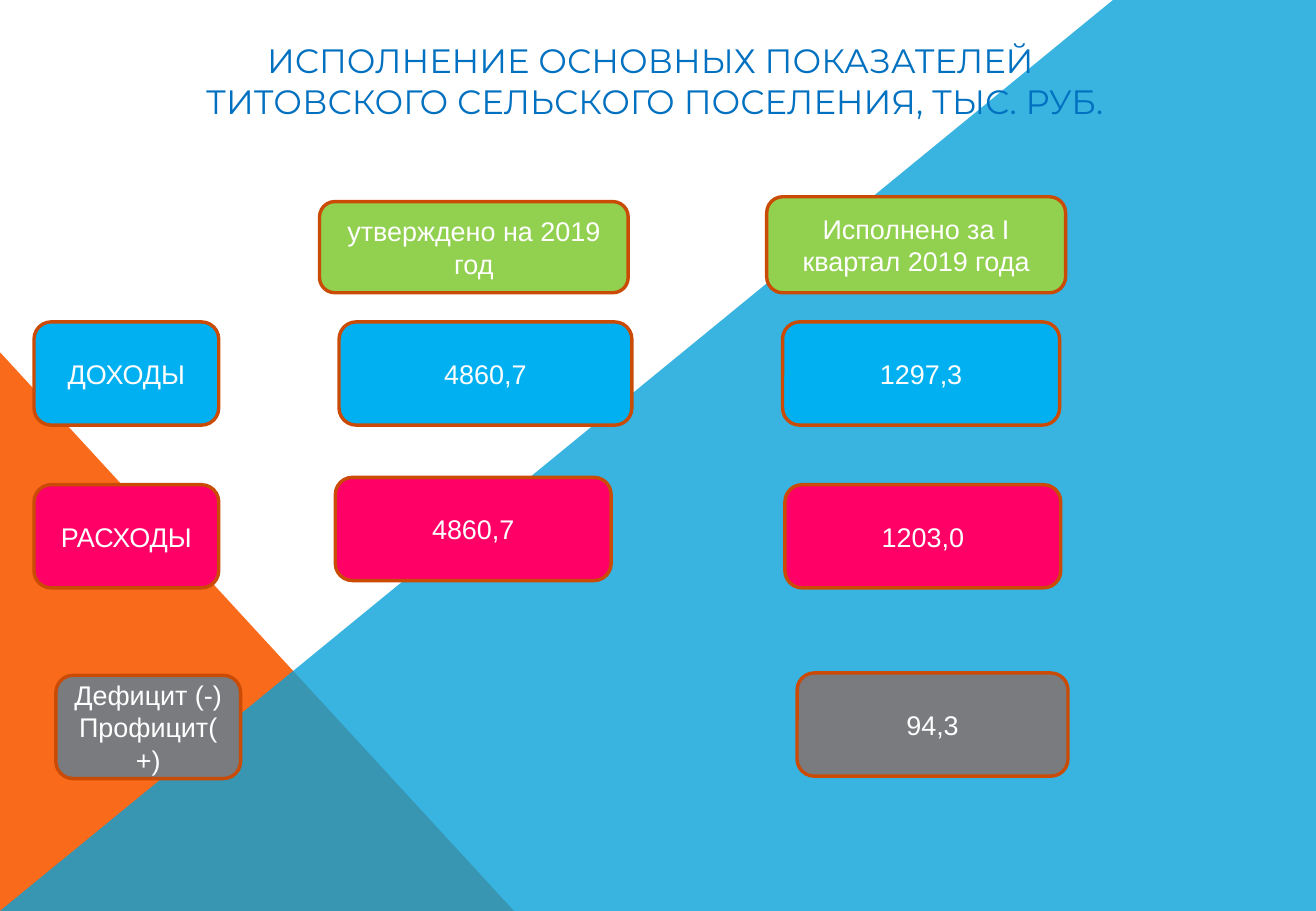
from lxml import etree
from pptx import Presentation
from pptx.dml.color import RGBColor
from pptx.enum.shapes import MSO_SHAPE
from pptx.enum.text import MSO_ANCHOR, PP_ALIGN
from pptx.oxml.ns import qn
from pptx.util import Inches, Pt

ROUNDED = MSO_SHAPE.ROUNDED_RECTANGLE
RIGHT_TRIANGLE = MSO_SHAPE.RIGHT_TRIANGLE
MIDDLE = MSO_ANCHOR.MIDDLE
CENTER = PP_ALIGN.CENTER

SLIDE_W, SLIDE_H = 10.83, 7.5
GREEN, BLUE, PINK, GRAY = "92D050", "00B0F0", "FF0066", "797B7E"
CARD_H = 0.85

TITLE = ("ИСПОЛНЕНИЕ ОСНОВНЫХ ПОКАЗАТЕЛЕЙ \n"
         "ТИТОВСКОГО СЕЛЬСКОГО ПОСЕЛЕНИЯ, ТЫС. РУБ.")

# Each card: text, left, top offset within its row, width, height
ROWS = [
    (1.62, GREEN, [("утверждено на 2019 год", 2.63, 0.04, 2.54, 0.75),
                   ("Исполнено за I квартал 2019 года", 6.31, 0, 2.46, 0.79)]),
    (2.65, BLUE, [("ДОХОДЫ", 0.28, 0, 1.52, CARD_H),
                  ("4860,7", 2.79, 0, 2.41, CARD_H),
                  ("1297,3", 6.44, 0, 2.28, CARD_H)]),
    (3.99, PINK, [("РАСХОДЫ", 0.28, 0, 1.52, CARD_H),
                  ("4860,7", 2.76, -0.06, 2.27, CARD_H),
                  ("1203,0", 6.46, 0, 2.27, CARD_H)]),
    (5.54, GRAY, [("Дефицит (-)\nПрофицит(+)", 0.46, 0.02, 1.52, CARD_H),
                  ("94,3", 6.56, 0, 2.23, CARD_H)]),
]


def rgb(color):
    return RGBColor.from_string(color)


def paint(shape, color):
    shape.shadow.inherit = False
    shape.fill.solid()
    shape.fill.fore_color.rgb = rgb(color)


def write(shape, text, font_name, size, color):
    frame = shape.text_frame
    frame.word_wrap = True
    frame.text = text
    for paragraph in frame.paragraphs:
        paragraph.alignment = CENTER
        for run in paragraph.runs:
            run.font.name = font_name
            run.font.size = Pt(size)
            run.font.color.rgb = rgb(color)


def add_backdrop(slide, left, top, width, height):
    # Orange corner at the lower left
    corner_h = 4.6
    corner = slide.shapes.add_shape(
        RIGHT_TRIANGLE, Inches(left), Inches(top + height - corner_h),
        Inches(4.23), Inches(corner_h))
    paint(corner, "F96A1B")
    corner.line.fill.background()

    # Translucent blue field below the diagonal
    right, bottom = left + width, top + height
    builder = slide.shapes.build_freeform(Inches(left), Inches(bottom))
    outline = [(left + 9.16, top), (right, top), (right, bottom)]
    builder.add_line_segments([(Inches(x), Inches(y)) for x, y in outline])
    field = builder.convert_to_shape()
    paint(field, "08A1D9")
    field.line.fill.background()
    fill_color = field.fill._xPr.find(qn("a:solidFill"))[0]
    etree.SubElement(fill_color, qn("a:alpha")).set("val", "80000")


def add_title(slide, left, top, width, height):
    title = slide.shapes.add_textbox(
        Inches(left), Inches(top), Inches(width), Inches(height))
    write(title, TITLE, "Montserrat", 20, "0070C0")


def add_card(slide, left, top, width, height, text, color):
    card = slide.shapes.add_shape(
        ROUNDED, Inches(left), Inches(top), Inches(width), Inches(height))
    paint(card, color)
    card.line.color.rgb = rgb("CA4B05")
    card.line.width = Pt(2)
    card.text_frame.vertical_anchor = MIDDLE
    write(card, text, "Arial", 16, "FFFFFF")


def add_budget_rows(slide, left, top):
    for row_top, color, cards in ROWS:
        for text, card_left, offset, width, height in cards:
            add_card(slide, left + card_left, top + row_top + offset,
                     width, height, text, color)


def main():
    deck = Presentation()
    deck.slide_width, deck.slide_height = Inches(SLIDE_W), Inches(SLIDE_H)
    slide = deck.slides.add_slide(deck.slide_layouts[6])
    add_backdrop(slide, 0, 0, SLIDE_W, SLIDE_H)
    add_title(slide, 0.09, 0.28, 10.6, 0.77)
    add_budget_rows(slide, 0, 0)
    deck.save("out.pptx")


if __name__ == "__main__":
    main()
